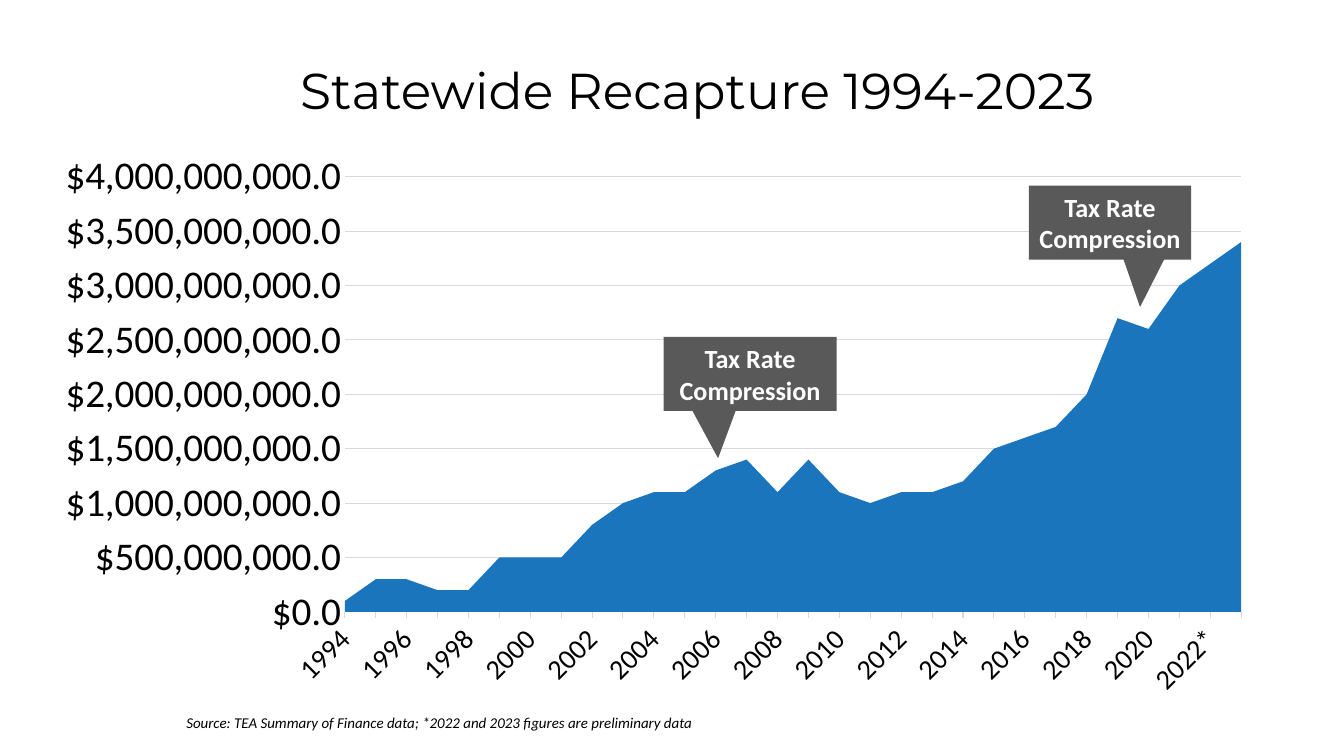
from dataclasses import dataclass

import lxml.etree
import pptx
import pptx.chart.data
import pptx.dml.color
import pptx.enum.chart
import pptx.enum.shapes
import pptx.enum.text
import pptx.oxml.ns
import pptx.oxml.xmlchemy
import pptx.util

BLACK = pptx.dml.color.RGBColor(0x00, 0x00, 0x00)
WHITE = pptx.dml.color.RGBColor(0xFF, 0xFF, 0xFF)
BLUE = pptx.dml.color.RGBColor(0x1B, 0x75, 0xBC)
CHARCOAL = pptx.dml.color.RGBColor(0x59, 0x59, 0x59)
LIGHT_GRAY = pptx.dml.color.RGBColor(0xD9, 0xD9, 0xD9)

SLIDE_WIDTH = pptx.util.Inches(13.33)
SLIDE_HEIGHT = pptx.util.Inches(7.5)
COLUMNS, ROWS = 160, 90
CENTER = pptx.enum.text.PP_ALIGN.CENTER
LEFT = pptx.enum.text.PP_ALIGN.LEFT

HUNDRED_MILLION = 100_000_000
RECAPTURE = [
    1, 3, 3, 2, 2, 5, 5, 5, 8, 10, 11, 11, 13, 14, 11,
    14, 11, 10, 11, 11, 12, 15, 16, 17, 20, 27, 26, 30, 32, 34,
]


@dataclass(frozen=True)
class Area:
    column: float
    row: float
    columns: float
    rows: float

    def box(self) -> tuple[int, int, int, int]:
        return (
            round(SLIDE_WIDTH * self.column / COLUMNS),
            round(SLIDE_HEIGHT * self.row / ROWS),
            round(SLIDE_WIDTH * self.columns / COLUMNS),
            round(SLIDE_HEIGHT * self.rows / ROWS),
        )


@dataclass(frozen=True)
class Style:
    size: float
    font: str = "Calibri"
    color: pptx.dml.color.RGBColor = BLACK
    bold: bool = False
    italic: bool = False
    align: pptx.enum.text.PP_ALIGN = LEFT


@dataclass(frozen=True)
class Label:
    text: str
    area: Area
    style: Style


@dataclass(frozen=True)
class Callout:
    area: Area
    flipped: bool


CALLOUT_TEXT = "Tax Rate Compression"
CALLOUT_STYLE = Style(18.7, color=WHITE, bold=True, align=CENTER)
LABELS = [
    Label("Statewide Recapture 1994-2023", Area(18, 6.4, 130, 8.5),
          Style(36, font="Montserrat", align=CENTER)),
    Label("Source: TEA Summary of Finance data; *2022 and 2023 figures are preliminary data",
          Area(21, 84.4, 124, 3.4), Style(10.7, italic=True)),
]
CALLOUTS = [
    Callout(Area(79, 40.1, 20.6, 8.8), flipped=False),
    Callout(Area(122.5, 22.1, 19.3, 8.8), flipped=True),
]
CHART_AREA = Area(4.5, 17, 146.2, 67.3)
PLOT_SHARES = {"x": 0.25, "y": 0.06, "w": 0.73, "h": 0.77}


def style_font(font, style: Style) -> None:
    font.size = pptx.util.Pt(style.size)
    font.name = style.font
    font.color.rgb = style.color
    font.bold = style.bold
    font.italic = style.italic


def write(frame, text: str, style: Style) -> None:
    frame.word_wrap = True
    frame.auto_size = pptx.enum.text.MSO_AUTO_SIZE.SHAPE_TO_FIT_TEXT
    paragraph = frame.paragraphs[0]
    paragraph.alignment = style.align
    run = paragraph.add_run()
    run.text = text
    style_font(run.font, style)


def draw_label(slide, label: Label) -> None:
    write(slide.shapes.add_textbox(*label.area.box()).text_frame, label.text, label.style)


def draw_callout(slide, callout: Callout) -> None:
    balloon = slide.shapes.add_shape(
        pptx.enum.shapes.MSO_SHAPE.RECTANGULAR_CALLOUT, *callout.area.box())
    balloon.shadow.inherit = False
    balloon.fill.solid()
    balloon.fill.fore_color.rgb = CHARCOAL
    balloon.line.fill.background()
    balloon.adjustments[0] = -0.185
    balloon.adjustments[1] = 1.142
    if callout.flipped:
        balloon._element.spPr.find(pptx.oxml.ns.qn("a:xfrm")).set("flipH", "1")
    frame = balloon.text_frame
    frame.vertical_anchor = pptx.enum.text.MSO_ANCHOR.MIDDLE
    frame.margin_left = frame.margin_right = pptx.util.Inches(0.08)
    write(frame, CALLOUT_TEXT, CALLOUT_STYLE)


def chart_element(tag: str, value: str):
    element = pptx.oxml.xmlchemy.OxmlElement(tag)
    element.set("val", value)
    return element


def place_plot(plot_area) -> None:
    for automatic in plot_area.findall(pptx.oxml.ns.qn("c:layout")):
        plot_area.remove(automatic)
    layout = pptx.oxml.xmlchemy.OxmlElement("c:layout")
    manual = lxml.etree.SubElement(layout, pptx.oxml.ns.qn("c:manualLayout"))
    manual.append(chart_element("c:layoutTarget", "inner"))
    for side in ("x", "y"):
        manual.append(chart_element(f"c:{side}Mode", "edge"))
    for side, share in PLOT_SHARES.items():
        manual.append(chart_element(f"c:{side}", str(share)))
    plot_area.insert(0, layout)


def style_line(line) -> None:
    line.color.rgb = LIGHT_GRAY
    line.width = pptx.util.Pt(0.75)


def draw_chart(slide) -> None:
    recapture = pptx.chart.data.CategoryChartData(number_format='"$"#,##0.0')
    recapture.categories = [f"{year}*" if year >= 2022 else str(year)
                            for year in range(1994, 2024)]
    recapture.add_series("Series 1", [amount * HUNDRED_MILLION for amount in RECAPTURE])
    chart = slide.shapes.add_chart(
        pptx.enum.chart.XL_CHART_TYPE.AREA_STACKED, *CHART_AREA.box(), recapture).chart
    chart.has_legend = False
    chart.has_title = False
    style_font(chart.font, Style(10))
    plot = chart.plots[0]
    plot.vary_by_categories = False
    plot.series[0].format.fill.solid()
    plot.series[0].format.fill.fore_color.rgb = BLUE

    years = chart.category_axis
    years.has_major_gridlines = False
    years.major_tick_mark = pptx.enum.chart.XL_TICK_MARK.OUTSIDE
    style_line(years.format.line)
    style_font(years.tick_labels.font, Style(20))
    years_xml = years._element
    years_xml.find(pptx.oxml.ns.qn("c:txPr")).find(
        pptx.oxml.ns.qn("a:bodyPr")).set("rot", "-2700000")
    years_xml.find(pptx.oxml.ns.qn("c:noMultiLvlLbl")).addprevious(
        chart_element("c:tickLblSkip", "2"))

    dollars = chart.value_axis
    dollars.minimum_scale = 0
    dollars.maximum_scale = 40 * HUNDRED_MILLION
    dollars.major_unit = 5 * HUNDRED_MILLION
    dollars.major_tick_mark = pptx.enum.chart.XL_TICK_MARK.NONE
    dollars.has_major_gridlines = True
    style_line(dollars.major_gridlines.format.line)
    dollars.format.line.fill.background()
    dollars.tick_labels.number_format = '"$"#,##0.0'
    dollars.tick_labels.number_format_is_linked = False
    style_font(dollars.tick_labels.font, Style(28))
    dollars._element.find(pptx.oxml.ns.qn("c:crossBetween")).set("val", "midCat")
    place_plot(years_xml.getparent())


def main() -> None:
    deck = pptx.Presentation()
    deck.slide_width = SLIDE_WIDTH
    deck.slide_height = SLIDE_HEIGHT
    slide = deck.slides.add_slide(deck.slide_layouts[6])
    draw_chart(slide)
    for label in LABELS:
        draw_label(slide, label)
    for callout in CALLOUTS:
        draw_callout(slide, callout)
    deck.save("out.pptx")


if __name__ == "__main__":
    main()
